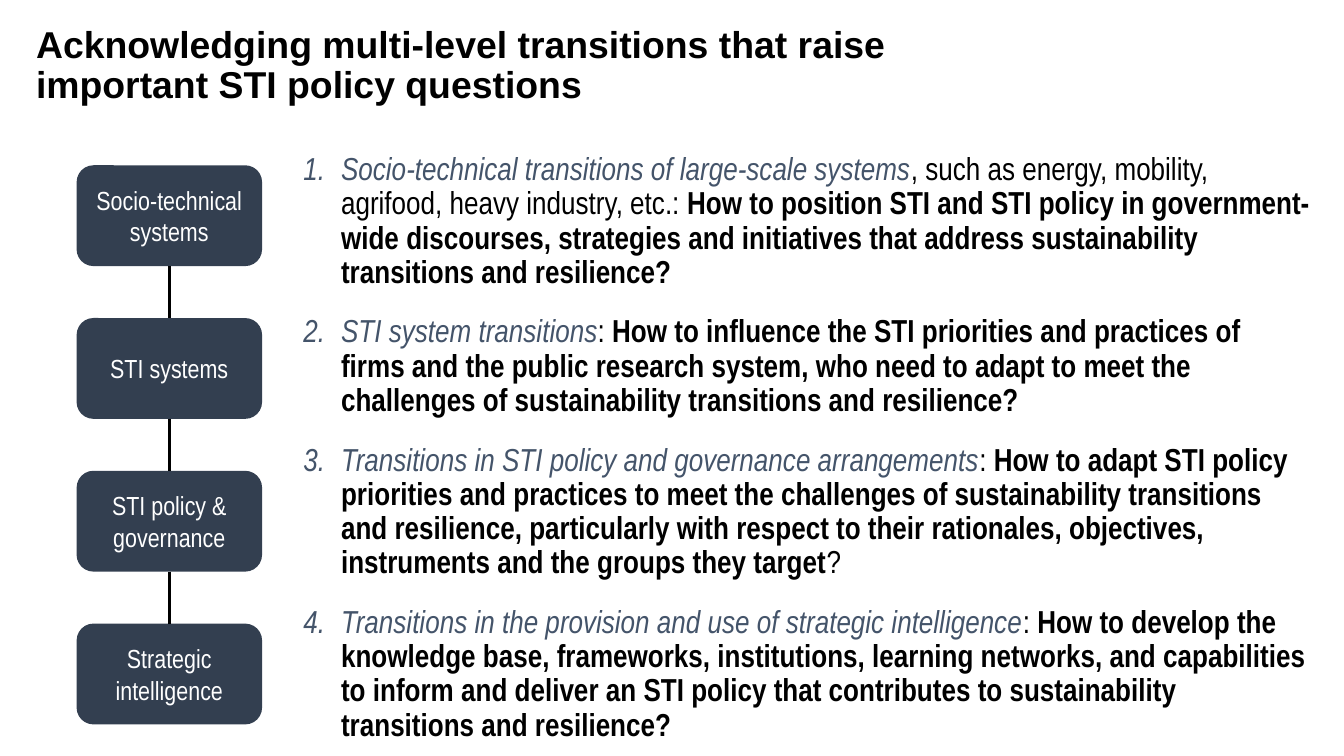
from dataclasses import dataclass

from lxml.etree import SubElement
from pptx import Presentation
from pptx.dml.color import RGBColor
from pptx.enum.shapes import MSO_CONNECTOR, MSO_SHAPE
from pptx.enum.text import MSO_ANCHOR, PP_ALIGN
from pptx.oxml.ns import qn
from pptx.util import Inches, Pt


@dataclass(frozen=True)
class Theme:
    ink: RGBColor = RGBColor(0, 0, 0)
    white: RGBColor = RGBColor(255, 255, 255)
    accent: RGBColor = RGBColor(0x44, 0x54, 0x6A)
    box: RGBColor = RGBColor(0x33, 0x3F, 0x50)
    head: str = "Arial"
    body: str = "Arial Narrow"
    head_size: int = 20
    body_size: int = 17
    box_size: int = 14


@dataclass(frozen=True)
class Level:
    label: str
    topic: str
    link: str
    ask: str
    tail: str = ""


THEME = Theme()
TITLE = "Acknowledging multi-level transitions that raise important STI policy questions"
LEVELS = [
    Level("Socio-technical systems",
          "Socio-technical transitions of large-scale systems",
          ", such as energy, mobility, agrifood, heavy industry, etc.: ",
          "How to position STI and STI policy in government-wide discourses, "
          "strategies and initiatives that address sustainability transitions "
          "and resilience?"),
    Level("STI systems", "STI system transitions", ": ",
          "How to influence the STI priorities and practices of firms and the "
          "public research system, who need to adapt to meet the challenges of "
          "sustainability transitions and resilience?"),
    Level("STI policy & governance",
          "Transitions in STI policy and governance arrangements", ": ",
          "How to adapt STI policy priorities and practices to meet the "
          "challenges of sustainability transitions and resilience, particularly "
          "with respect to their rationales, objectives, instruments and the "
          "groups they target", "?"),
    Level("Strategic intelligence",
          "Transitions in the provision and use of strategic intelligence", ": ",
          "How to develop the knowledge base, frameworks, institutions, learning "
          "networks, and capabilities to inform and deliver an STI policy that "
          "contributes to sustainability transitions and resilience?"),
]
LEFT, TOP, LAST, WIDTH, HEIGHT = 0.57, 1.23, 4.64, 1.38, 0.75
STEP = (LAST - TOP) / (len(LEVELS) - 1)


def set_font(font, name: str, size: int, color: RGBColor):
    font.name, font.size = name, Pt(size)
    font.color.rgb = color


def add_text(slide, left: float, top: float, width: float, height: float):
    box = slide.shapes.add_textbox(
        Inches(left), Inches(top), Inches(width), Inches(height))
    box.text_frame.word_wrap = True
    return box.text_frame


def add_title(slide):
    frame = add_text(slide, 0.17, 0.07, 7.53, 0.85)
    frame.vertical_anchor = MSO_ANCHOR.MIDDLE
    para = frame.paragraphs[0]
    para.text = TITLE
    para.line_spacing = 0.9
    set_font(para.font, THEME.head, THEME.head_size, THEME.ink)
    para.font.bold = True


def add_number(para):
    """Number the paragraph, with a hanging indent."""
    props = para._p.get_or_add_pPr()
    props.set("marL", str(Inches(0.28)))
    props.set("indent", str(Inches(-0.28)))
    SubElement(props, qn("a:buFont"), typeface="+mj-lt")
    SubElement(props, qn("a:buAutoNum"), type="arabicPeriod")


def add_run(para, text: str, color: RGBColor, bold=False, italic=False):
    run = para.add_run()
    run.text = text
    run.font.color.rgb = color
    run.font.bold, run.font.italic = bold, italic


def add_list(slide, levels: list[Level]):
    frame = add_text(slide, 2.16, 1.09, 7.7, 4.71)
    for i, level in enumerate(levels):
        para = frame.add_paragraph() if i else frame.paragraphs[0]
        add_number(para)
        para.line_spacing = 0.9
        para.space_before, para.space_after = Pt(7.5), Pt(6)
        set_font(para.font, THEME.body, THEME.body_size, THEME.ink)
        add_run(para, level.topic, THEME.accent, italic=True)
        add_run(para, level.link, THEME.ink)
        add_run(para, level.ask, THEME.ink, bold=True)
        if level.tail:
            add_run(para, level.tail, THEME.ink)


def add_box(slide, label: str, top: float):
    box = slide.shapes.add_shape(
        MSO_SHAPE.ROUNDED_RECTANGLE,
        Inches(LEFT), Inches(top), Inches(WIDTH), Inches(HEIGHT))
    box.shadow.inherit = False
    box.fill.solid()
    box.fill.fore_color.rgb = THEME.box
    box.line.fill.background()
    frame = box.text_frame
    frame.word_wrap = True
    frame.vertical_anchor = MSO_ANCHOR.MIDDLE
    para = frame.paragraphs[0]
    para.text = label
    para.alignment = PP_ALIGN.CENTER
    set_font(para.font, THEME.body, THEME.box_size, THEME.white)
    return box


def join(slide, upper, lower):
    line = slide.shapes.add_connector(MSO_CONNECTOR.STRAIGHT, 0, 0, 0, 0)
    line.begin_connect(upper, 2)
    line.end_connect(lower, 0)
    line.line.color.rgb = THEME.ink
    line.line.width = Pt(1.5)
    SubElement(line._element.spPr, qn("a:effectLst"))


def main():
    deck = Presentation()
    deck.slide_width = Inches(10)
    deck.slide_height = Inches(10 * 9 / 16)
    slide = deck.slides.add_slide(deck.slide_layouts[6])
    add_title(slide)
    add_list(slide, LEVELS)
    boxes = [add_box(slide, level.label, TOP + i * STEP)
             for i, level in enumerate(LEVELS)]
    for upper, lower in zip(boxes, boxes[1:]):
        join(slide, upper, lower)
    deck.save("out.pptx")


if __name__ == "__main__":
    main()
